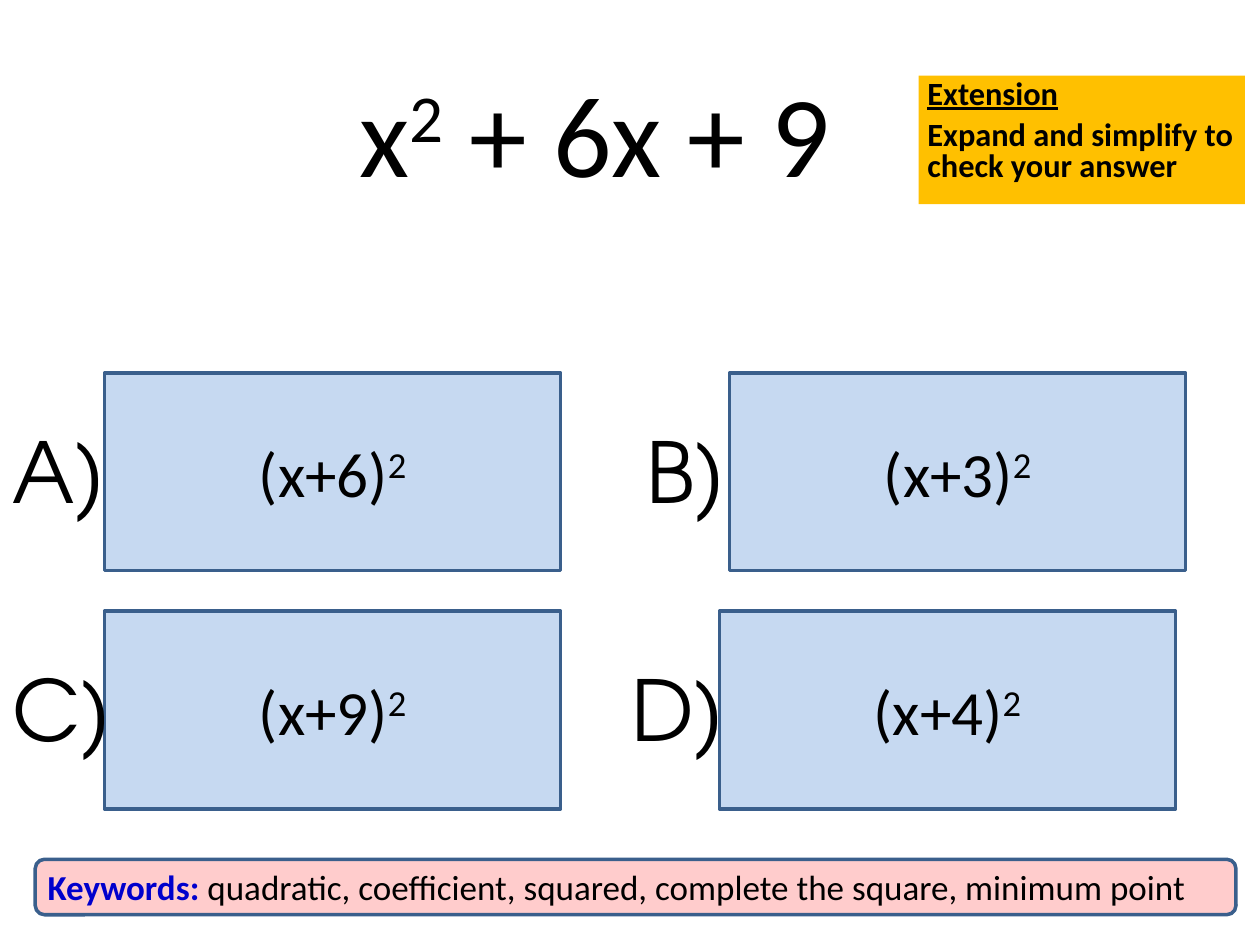
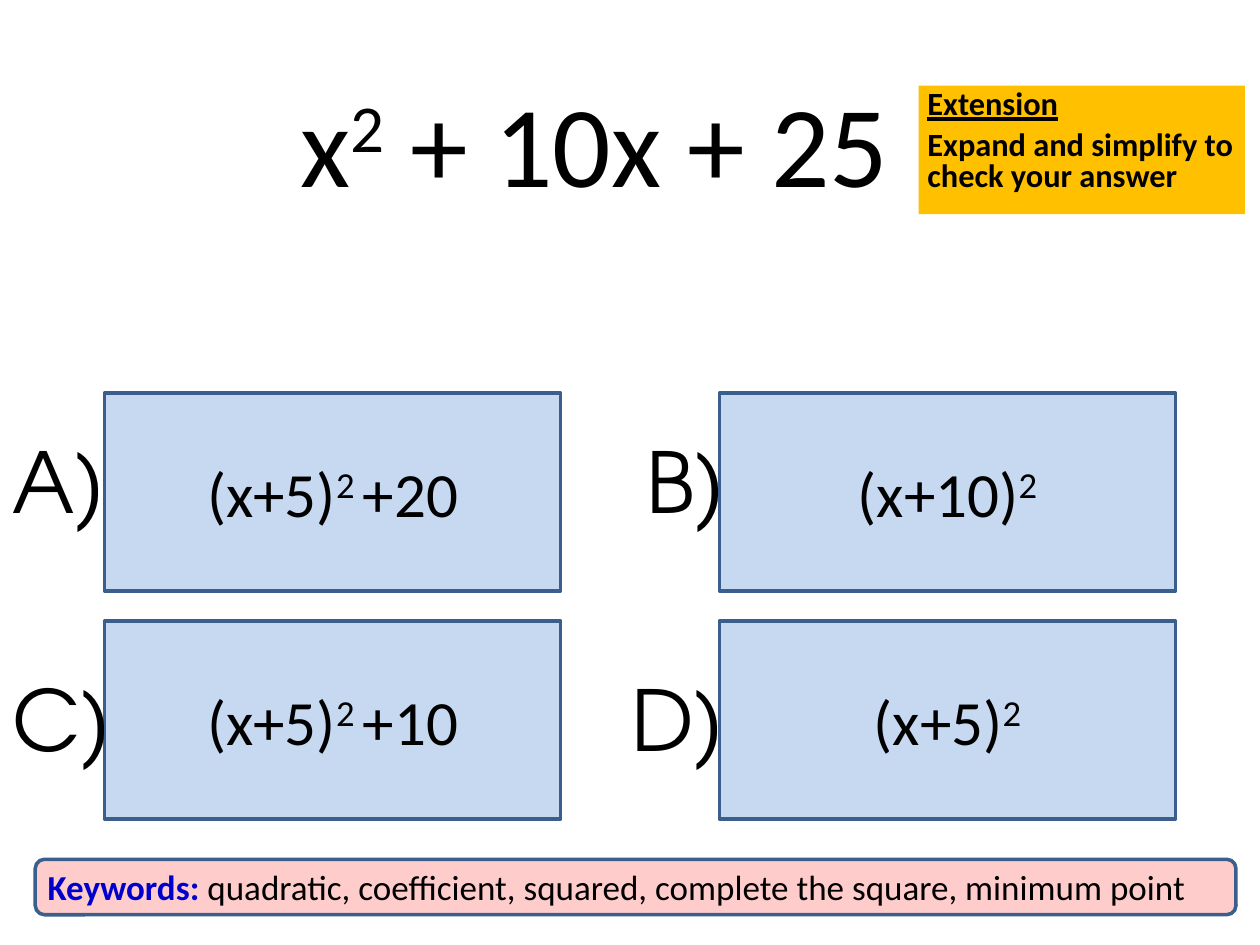
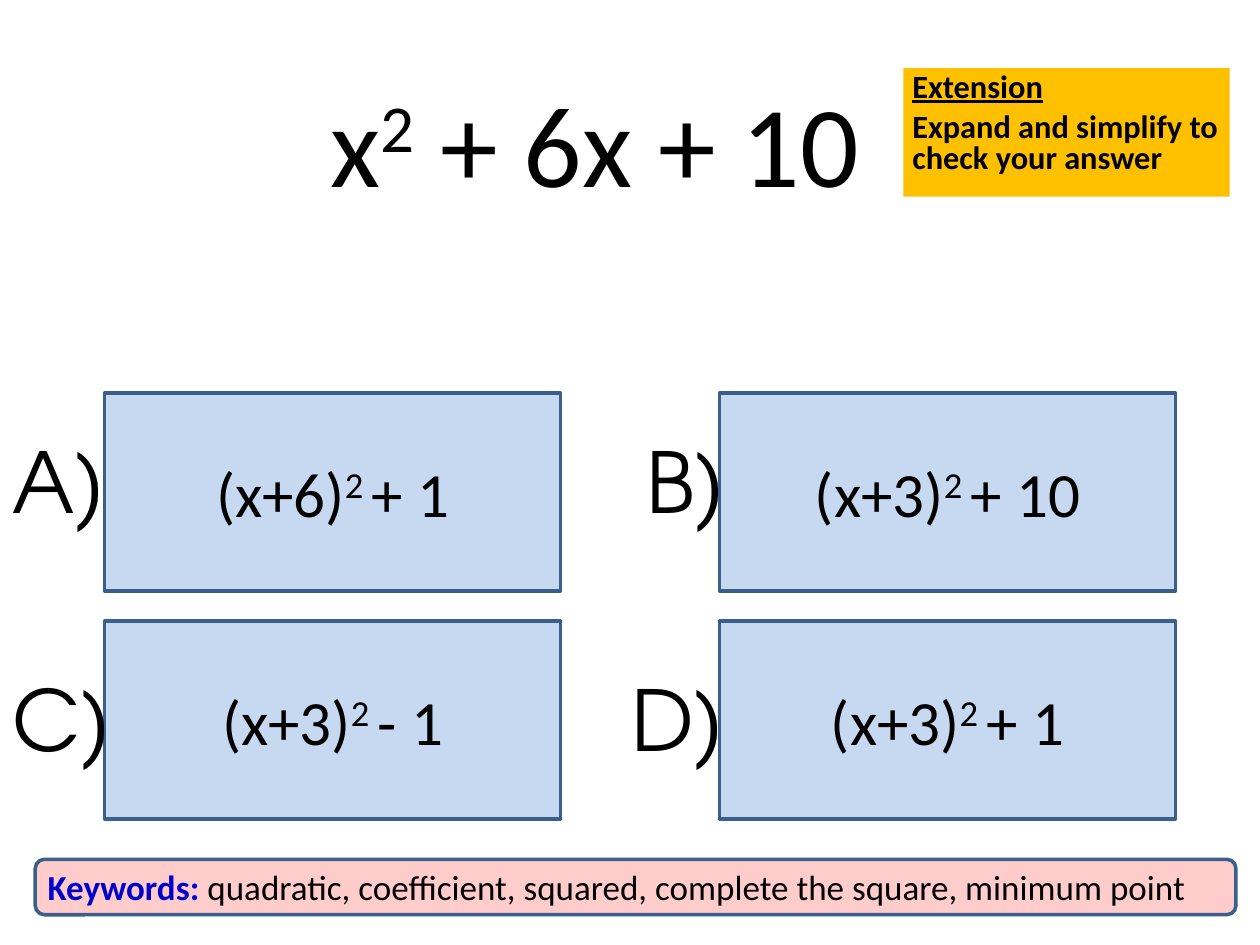
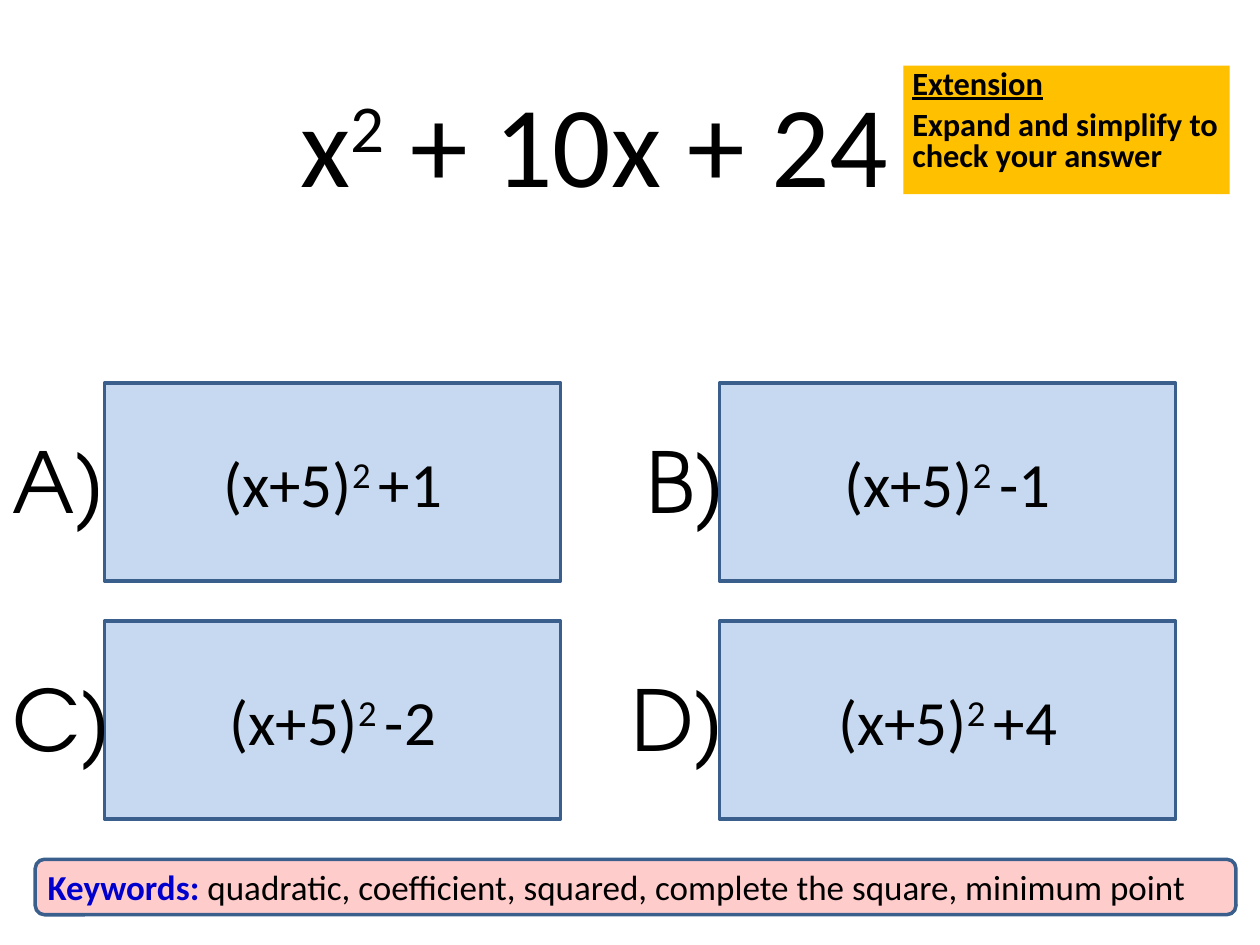
"""Build four multiple-choice slides on completing the square."""
from pptx import Presentation
from pptx import util as u
from pptx.dml.color import RGBColor
from pptx.enum import shapes, text

QUESTIONS = [
    {"quadratic": ("x", "2", " + 6x + 9"), "title_top": 0.44,
     "answers": [("(x+6)", "2"), ("(x+3)", "2"), ("(x+9)", "2"), ("(x+4)", "2")],
     "first_row_top": 2.96, "b_left": 5.79, "extension": (7.29, 0.6)},
    {"quadratic": ("x", "2", " + 10x + 25"), "title_top": 0.52,
     "answers": [("(x+5)", "2 ", "+20"), ("(x+10)", "2"),
                 ("(x+5)", "2 ", "+10"), ("(x+5)", "2")],
     "first_row_top": 3.12, "b_left": 5.71, "extension": (7.29, 0.68)},
    {"quadratic": ("x", "2", " + 6x + 10"), "title_top": 0.52,
     "answers": [("(x+6)", "2 ", "+ 1"), ("(x+3)", "2 ", "+ 10"),
                 ("(x+3)", "2 ", "- 1"), ("(x+3)", "2 ", "+ 1")],
     "first_row_top": 3.12, "b_left": 5.71, "extension": (7.17, 0.54)},
    {"quadratic": ("x", "2", " + 10x + 24"), "title_top": 0.52,
     "answers": [("(x+5)", "2 ", "+1"), ("(x+5)", "2 ", "-1"),
                 ("(x+5)", "2 ", "-2"), ("(x+5)", "2 ", "+4")],
     "first_row_top": 3.04, "b_left": 5.71, "extension": (7.17, 0.52)},
]
LABELS = [("A)", 0, 0.95), ("B)", 5.03, 0.84), ("C)", 0, 1), ("D)", 4.91, 0.95)]
EXTENSION = ["Extension", "Expand and simplify to check your answer"]
KEYWORDS = "quadratic, coefficient, squared, complete the square, minimum point"

BODY_FONT, LABEL_FONT = "Calibri", "TeX Gyre Adventor"
BLACK, BLUE, OUTLINE = "000000", "0000CC", "3A5F8C"
ANSWER_FILL, KEYWORD_FILL, EXTENSION_FILL = "C6D9F1", "FFCCCC", "FFC000"
LEFT_COLUMN, RIGHT_COLUMN = 0.83, 5.71
ANSWER_WIDTH, ANSWER_HEIGHT = 3.62, 1.57
LABEL_DROP, ROW_STEP, SECOND_ROW_DROP = 2.84, 1.89, 4.41


def color(hex_code):
    return RGBColor.from_string(hex_code)


def add_box(parent, kind, box, fill, line=None):
    shape = parent.add_shape(kind, *map(u.Inches, box))
    shape.shadow.inherit = False
    shape.fill.solid()
    shape.fill.fore_color.rgb = color(fill)
    if line:
        shape.line.color.rgb = color(line)
        shape.line.width = u.Pt(2)
    else:
        shape.line.fill.background()
    return shape


def add_text_box(parent, box, wrap=True):
    shape = parent.add_textbox(*map(u.Inches, box))
    shape.text_frame.word_wrap = wrap
    shape.text_frame.auto_size = text.MSO_AUTO_SIZE.SHAPE_TO_FIT_TEXT
    return shape


def add_run(paragraph, words, size, font=BODY_FONT, ink=BLACK, bold=False):
    run = paragraph.add_run()
    run.text = words
    run.font.size = u.Pt(size)
    run.font.name = font
    run.font.color.rgb = color(ink)
    run.font.bold = bold
    return run


def write_formula(shape, parts, size):
    paragraph = shape.text_frame.paragraphs[0]
    paragraph.alignment = text.PP_ALIGN.CENTER
    for index, part in enumerate(parts):
        run = add_run(paragraph, part, size)
        if index == 1:
            run.font._element.set("baseline", "30000")


def add_answers(slide, question):
    second_row_top = question["title_top"] + SECOND_ROW_DROP
    corners = [(LEFT_COLUMN, question["first_row_top"]),
               (question["b_left"], question["first_row_top"]),
               (LEFT_COLUMN, second_row_top), (RIGHT_COLUMN, second_row_top)]
    for corner, answer in zip(corners, question["answers"]):
        shape = add_box(slide.shapes, shapes.MSO_SHAPE.RECTANGLE,
                        (*corner, ANSWER_WIDTH, ANSWER_HEIGHT), ANSWER_FILL, OUTLINE)
        shape.text_frame.vertical_anchor = text.MSO_ANCHOR.MIDDLE
        write_formula(shape, answer, 36)


def add_labels(slide, title_top):
    for index, (label, left, width) in enumerate(LABELS):
        top = title_top + LABEL_DROP + index // 2 * ROW_STEP
        shape = add_text_box(slide.shapes, (left, top, width, 0.91), wrap=False)
        add_run(shape.text_frame.paragraphs[0], label, 48, LABEL_FONT)


def add_title(slide, question):
    shape = add_text_box(slide.shapes, (0.98, question["title_top"], 7.48, 1.21))
    write_formula(shape, question["quadratic"], 66)


def add_keywords(slide):
    group = slide.shapes.add_group_shape()
    add_box(group.shapes, shapes.MSO_SHAPE.ROUNDED_RECTANGLE,
            (0.28, 6.82, 9.53, 0.44), KEYWORD_FILL, OUTLINE)
    shape = add_text_box(group.shapes, (0.28, 6.82, 9.37, 0.44))
    paragraph = shape.text_frame.paragraphs[0]
    add_run(paragraph, "Keywords: ", 20, ink=BLUE, bold=True)
    add_run(paragraph, KEYWORDS, 20)


def add_extension(slide, corner):
    shape = add_box(slide.shapes, shapes.MSO_SHAPE.RECTANGLE,
                    (*corner, 2.59, 1.02), EXTENSION_FILL)
    frame = shape.text_frame
    frame.vertical_anchor = text.MSO_ANCHOR.TOP
    frame.margin_left = frame.margin_right = u.Inches(0.07)
    frame.margin_top = frame.margin_bottom = u.Inches(0.04)
    frame.text = "\n".join(EXTENSION)
    for index, paragraph in enumerate(frame.paragraphs):
        paragraph.alignment = text.PP_ALIGN.LEFT
        paragraph.line_spacing = 0.8
        paragraph.space_before = u.Pt(5.5)
        font = paragraph.runs[0].font
        font.name, font.size, font.bold = BODY_FONT, u.Pt(18.5), True
        font.color.rgb = color(BLACK)
        font.underline = index == 0


def main():
    presentation = Presentation()
    presentation.slide_width = u.Inches(10)
    presentation.slide_height = u.Inches(7.5)
    for question in QUESTIONS:
        slide = presentation.slides.add_slide(presentation.slide_layouts[6])
        add_answers(slide, question)
        add_labels(slide, question["title_top"])
        add_title(slide, question)
        add_keywords(slide)
        add_extension(slide, question["extension"])
    presentation.save("out.pptx")


if __name__ == "__main__":
    main()
